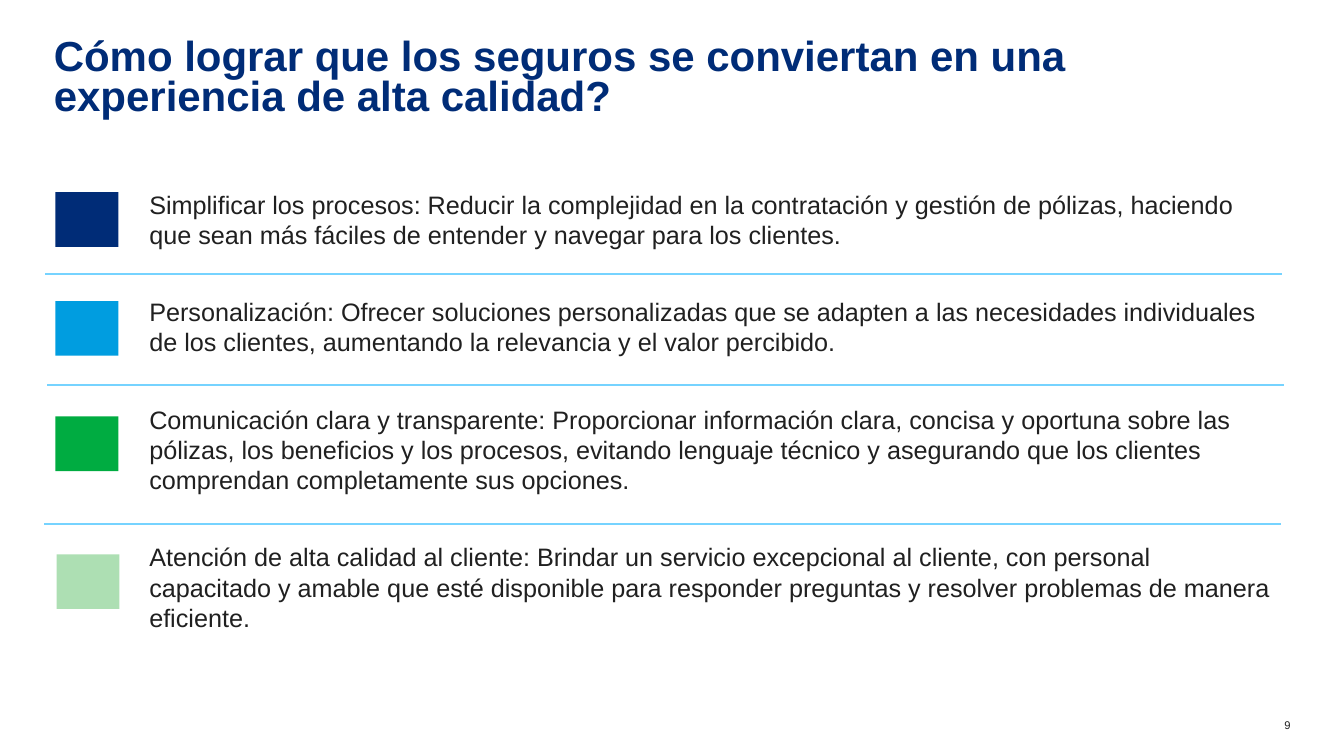
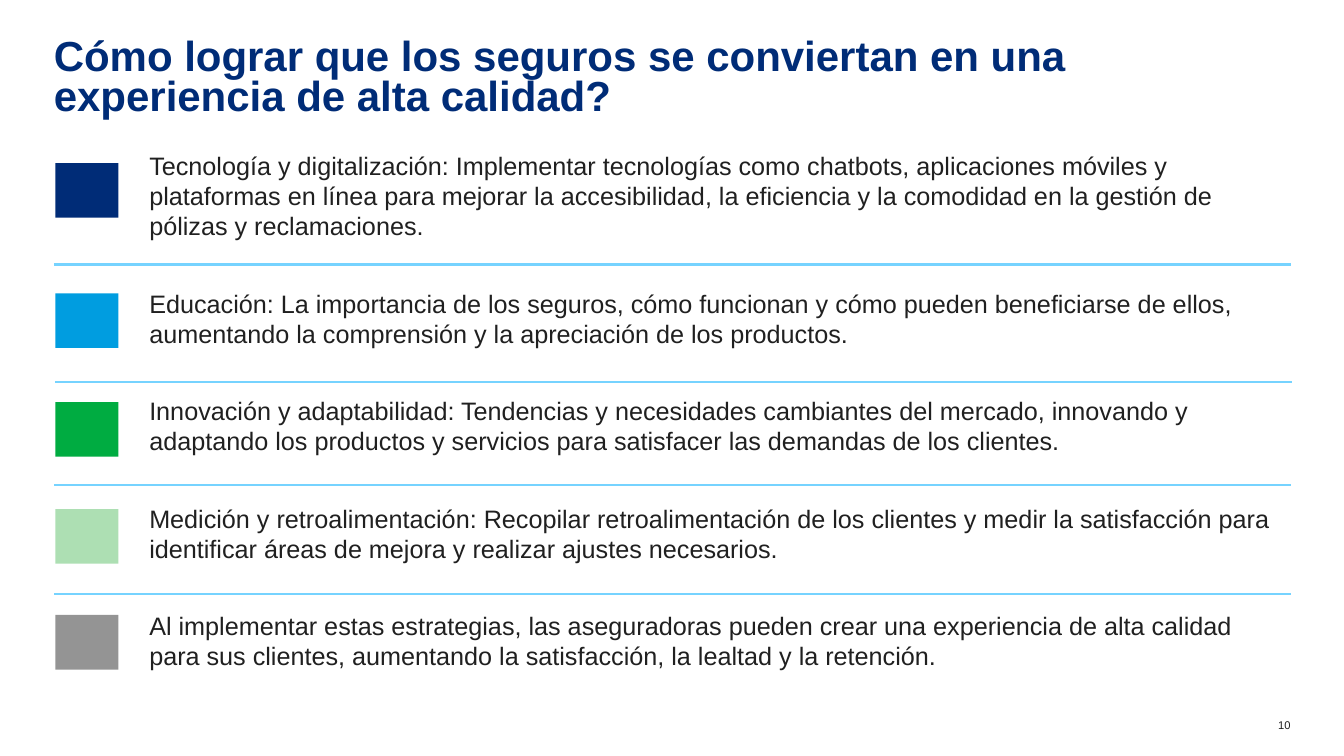
import pptx
import pptx.util
import pptx.dml.color
import pptx.enum.shapes
import pptx.enum.text
import pptx.oxml.ns
import lxml.etree

Pt = pptx.util.Pt
RGBColor = pptx.dml.color.RGBColor
PP_ALIGN = pptx.enum.text.PP_ALIGN

NAVY = RGBColor(0x00, 0x2C, 0x77)
BLUE = RGBColor(0x00, 0x9D, 0xE0)
GREEN = RGBColor(0x00, 0xAC, 0x41)
MINT = RGBColor(0xAD, 0xDF, 0xB3)
GRAY = RGBColor(0x94, 0x94, 0x94)
SKY = RGBColor(0x76, 0xD3, 0xFF)
INK = RGBColor(0x20, 0x20, 0x20)
SWATCH_COLORS = [NAVY, BLUE, GREEN, MINT, GRAY]

FONT = "Arial"
HEADLINE = "Cómo lograr que los seguros se conviertan en una experiencia de alta calidad?"
RULE_LENGTH = 883.5
ADVICE_GAP = 33.6

SLIDES = [
    {
        "number": "9",
        "advice_top": 134.9,
        "advice": [
            "Simplificar los procesos: Reducir la complejidad en la contratación y gestión de pólizas, haciendo que sean más fáciles de entender y navegar para los clientes.",
            "Personalización: Ofrecer soluciones personalizadas que se adapten a las necesidades individuales de los clientes, aumentando la relevancia y el valor percibido.",
            "Comunicación clara y transparente: Proporcionar información clara, concisa y oportuna sobre las pólizas, los beneficios y los procesos, evitando lenguaje técnico y asegurando que los clientes comprendan completamente sus opciones.",
            "Atención de alta calidad al cliente: Brindar un servicio excepcional al cliente, con personal capacitado y amable que esté disponible para responder preguntas y resolver problemas de manera eficiente.",
        ],
        "swatches": [(39.6, 137.3), (39.6, 215.1), (39.6, 297.5), (40.4, 396)],
        "rules": [(32.4, 195.7), (33.7, 275), (31.7, 374.3)],
    },
    {
        "number": "10",
        "advice_top": 107.3,
        "advice": [
            "Tecnología y digitalización: Implementar tecnologías como chatbots, aplicaciones móviles y plataformas en línea para mejorar la accesibilidad, la eficiencia y la comodidad en la gestión de pólizas y reclamaciones.",
            "Educación: La importancia de los seguros, cómo funcionan y cómo pueden beneficiarse de ellos, aumentando la comprensión y la apreciación de los productos.",
            "Innovación y adaptabilidad: Tendencias y necesidades cambiantes del mercado, innovando y adaptando los productos y servicios para satisfacer las demandas de los clientes.",
            "Medición y retroalimentación: Recopilar retroalimentación de los clientes y medir la satisfacción para identificar áreas de mejora y realizar ajustes necesarios.",
            "Al implementar estas estrategias, las aseguradoras pueden crear una experiencia de alta calidad para sus clientes, aumentando la satisfacción, la lealtad y la retención.",
        ],
        "swatches": [(39.6, 116.5), (39.6, 209.5), (39.6, 287.2), (39.6, 363.6), (39.6, 439.3)],
        "rules": [(38.5, 188.8), (39.3, 272.8), (38.8, 346.6), (38.8, 424.2)],
    },
]


def prepare_frame(frame):
    frame.margin_left = frame.margin_top = frame.margin_right = frame.margin_bottom = Pt(0)
    frame.word_wrap = True
    frame.auto_size = pptx.enum.text.MSO_AUTO_SIZE.NONE
    frame.vertical_anchor = pptx.enum.text.MSO_ANCHOR.TOP
    return frame


def write(paragraph, words, size, color, bold=False, align=PP_ALIGN.LEFT):
    paragraph.alignment = align
    run = paragraph.add_run()
    run.text = words
    run.font.name = FONT
    run.font.size = Pt(size)
    run.font.bold = bold
    run.font.color.rgb = color


def set_headline(slide):
    headline = slide.shapes.title
    headline.left, headline.top = Pt(38.4), Pt(28.1)
    headline.width, headline.height = Pt(883.5), Pt(38.9)
    paragraph = prepare_frame(headline.text_frame).paragraphs[0]
    paragraph.line_spacing = 0.8
    paragraph.space_before = Pt(0)
    write(paragraph, HEADLINE, 30, NAVY, bold=True)


def add_advice(slide, top, items):
    box = slide.shapes.add_textbox(Pt(106.6), Pt(top), Pt(805), Pt(463 - top))
    frame = prepare_frame(box.text_frame)
    for index, item in enumerate(items):
        paragraph = frame.add_paragraph() if index else frame.paragraphs[0]
        if index:
            paragraph.space_before = Pt(ADVICE_GAP)
        write(paragraph, item, 18, INK)


def add_page_number(slide, number):
    box = slide.shapes.add_textbox(Pt(900), Pt(513.4), Pt(22), Pt(9.4))
    write(prepare_frame(box.text_frame).paragraphs[0], number, 8, INK, align=PP_ALIGN.RIGHT)


def add_swatch(slide, left, top, color):
    swatch = slide.shapes.add_shape(
        pptx.enum.shapes.MSO_SHAPE.RECTANGLE, Pt(left), Pt(top), Pt(45), Pt(39))
    swatch.shadow.inherit = False
    swatch.fill.solid()
    swatch.fill.fore_color.rgb = color
    swatch.line.fill.background()


def add_rule(slide, left, y):
    rule = slide.shapes.add_connector(
        pptx.enum.shapes.MSO_CONNECTOR.STRAIGHT, Pt(left), Pt(y), Pt(left + RULE_LENGTH), Pt(y))
    rule.line.color.rgb = SKY
    rule.line.width = Pt(1.75)
    properties = rule._element.find(pptx.oxml.ns.qn("p:spPr"))
    lxml.etree.SubElement(properties, pptx.oxml.ns.qn("a:effectLst"))


def main():
    deck = pptx.Presentation()
    deck.slide_width, deck.slide_height = Pt(960), Pt(540)
    for content in SLIDES:
        slide = deck.slides.add_slide(deck.slide_layouts.get_by_name("Title Only"))
        set_headline(slide)
        add_advice(slide, content["advice_top"], content["advice"])
        add_page_number(slide, content["number"])
        for (left, top), color in zip(content["swatches"], SWATCH_COLORS):
            add_swatch(slide, left, top, color)
        for left, y in content["rules"]:
            add_rule(slide, left, y)
    deck.save("out.pptx")


if __name__ == "__main__":
    main()
